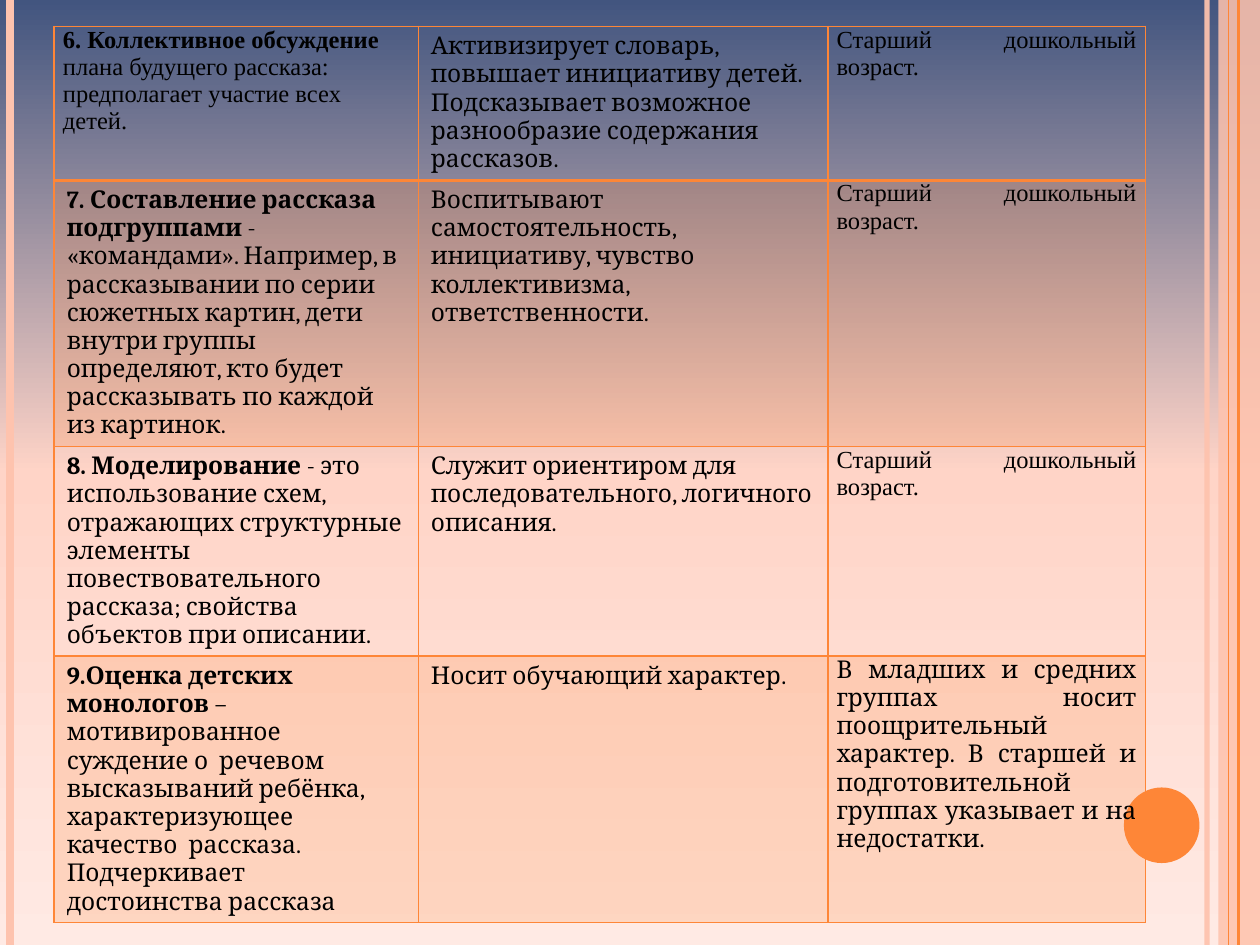
import copy
import pptx
import pptx.dml.color
import pptx.enum.shapes
import pptx.enum.text
import pptx.oxml.ns
import pptx.oxml.xmlchemy
import pptx.util
import lxml.etree

Inches = pptx.util.Inches
Pt = pptx.util.Pt
qn = pptx.oxml.ns.qn
hue = pptx.dml.color.RGBColor.from_string
ORANGE, PEACH = "FE8637", "FEC3AE"


def fade(part, percent):
    """Set the opacity of every colour inside an XML element."""
    for color in part.iter(qn("a:srgbClr")):
        lxml.etree.SubElement(color, qn("a:alpha")).set("val", str(percent * 1000))


deck = pptx.Presentation()
deck.slide_width, deck.slide_height = Inches(10), Inches(7.5)
slide = deck.slides.add_slide(deck.slide_layouts[6])
shapes = slide.shapes

# Background gradient, top to bottom
back = slide.background.fill
back.gradient()
back.gradient_angle = 270
stops = slide.element.find(".//" + qn("a:gsLst"))
stops.insert(1, copy.deepcopy(stops[0]))
for stop, (place, color) in zip(
    back.gradient_stops, [(0, "42557F"), (0.5, "FFD4C7"), (1, "FFEAE4")]
):
    stop.position = place
    stop.color.rgb = hue(color)

# Side stripes
band = shapes.add_shape(
    pptx.enum.shapes.MSO_SHAPE.RECTANGLE, Inches(9.67), 0, Inches(0.33), Inches(7.5)
)
dot = shapes.add_shape(
    pptx.enum.shapes.MSO_SHAPE.OVAL, Inches(8.92), Inches(6.25), Inches(0.6), Inches(0.6)
)
for shape, color in [(band, PEACH), (dot, ORANGE)]:
    shape.shadow.inherit = False
    shape.fill.solid()
    shape.fill.fore_color.rgb = hue(color)
    shape.line.fill.background()
fade(band.element, 87)

for x, color, width, percent in [
    (9.58, PEACH, 3, 93),
    (0.08, PEACH, 4.5, 100),
    (9.83, ORANGE, 1.5, 100),
    (9.75, ORANGE, 0.75, 100),
]:
    stripe = shapes.add_connector(
        pptx.enum.shapes.MSO_CONNECTOR.STRAIGHT, Inches(x), 0, Inches(x), Inches(7.5)
    )
    stripe.line.color.rgb = hue(color)
    stripe.line.width = Pt(width)
    lxml.etree.SubElement(stripe.element.spPr, qn("a:effectLst"))
    if percent < 100:
        fade(stripe.element, percent)

# Table of methods: title, description, benefit, age
SENIOR = "Старший дошкольный возраст."
rows = [
    (
        "6. Коллективное обсуждение ",
        "плана будущего рассказа: предполагает участие всех детей.",
        "Активизирует словарь, повышает инициативу детей.\n"
        "Подсказывает возможное разнообразие содержания рассказов.",
        SENIOR,
    ),
    (
        "7. Составление рассказа подгруппами ",
        "- «командами». Например, в рассказывании по серии сюжетных картин, дети "
        "внутри группы определяют, кто будет рассказывать по каждой из картинок.",
        "Воспитывают самостоятельность, инициативу, чувство коллективизма, "
        "ответственности.",
        SENIOR,
    ),
    (
        "8. Моделирование",
        " - это использование схем, отражающих структурные элементы "
        "повествовательного рассказа; свойства объектов при описании.",
        "Служит ориентиром для последовательного, логичного описания.",
        SENIOR,
    ),
    (
        "9.Оценка детских монологов ",
        "–мотивированное суждение о  речевом высказываний ребёнка, "
        "характеризующее качество  рассказа. Подчеркивает достоинства рассказа",
        "Носит обучающий характер.",
        "В младших и средних группах носит поощрительный характер. "
        "В старшей и подготовительной группах указывает и на недостатки.",
    ),
]
widths = [2.89, 3.25, 2.52]
heights = [1.22, 2.11, 1.66, 2.11]
table = shapes.add_table(
    4, 3, Inches(0.43), Inches(0.21), Inches(sum(widths)), Inches(sum(heights))
).table
table.first_row = table.horz_banding = False
for column, width in zip(table.columns, widths):
    column.width = Inches(width)

for i, (title, about, gain, age) in enumerate(rows):
    table.rows[i].height = Inches(heights[i])
    for j, text in enumerate([title, gain, age]):
        cell = table.cell(i, j)
        frame = cell.text_frame
        frame.text = text
        if j == 0:
            frame.paragraphs[0].add_run().text = about
        first = (i, j) == (0, 0)
        if first or j == 2:
            cell.margin_left = cell.margin_right = Inches(0.07)
            cell.margin_top = cell.margin_bottom = 0
        for para in frame.paragraphs:
            if j == 2:
                para.alignment = pptx.enum.text.PP_ALIGN.JUSTIFY
            for k, run in enumerate(para.runs):
                run.font.name = "Times New Roman" if first or text == SENIOR else "Cambria"
                run.font.size = Pt(14)
                run.font.bold = j == 0 and k == 0
                run.font.color.rgb = hue("000000")

        props = cell._tc.get_or_add_tcPr()
        for side in "LRTB":
            thick = (i, side) in [(0, "B"), (1, "T")]
            edge = lxml.etree.SubElement(props, qn("a:ln" + side))
            edge.set("w", str(Pt(2 if thick else 1)))
            solid = lxml.etree.SubElement(edge, qn("a:solidFill"))
            lxml.etree.SubElement(solid, qn("a:srgbClr")).set("val", ORANGE)
        if i % 2:
            cell.fill.solid()
            cell.fill.fore_color.rgb = hue(ORANGE)
            fade(props.find(qn("a:solidFill")), 20)
        else:
            cell.fill.background()

deck.save("out.pptx")
